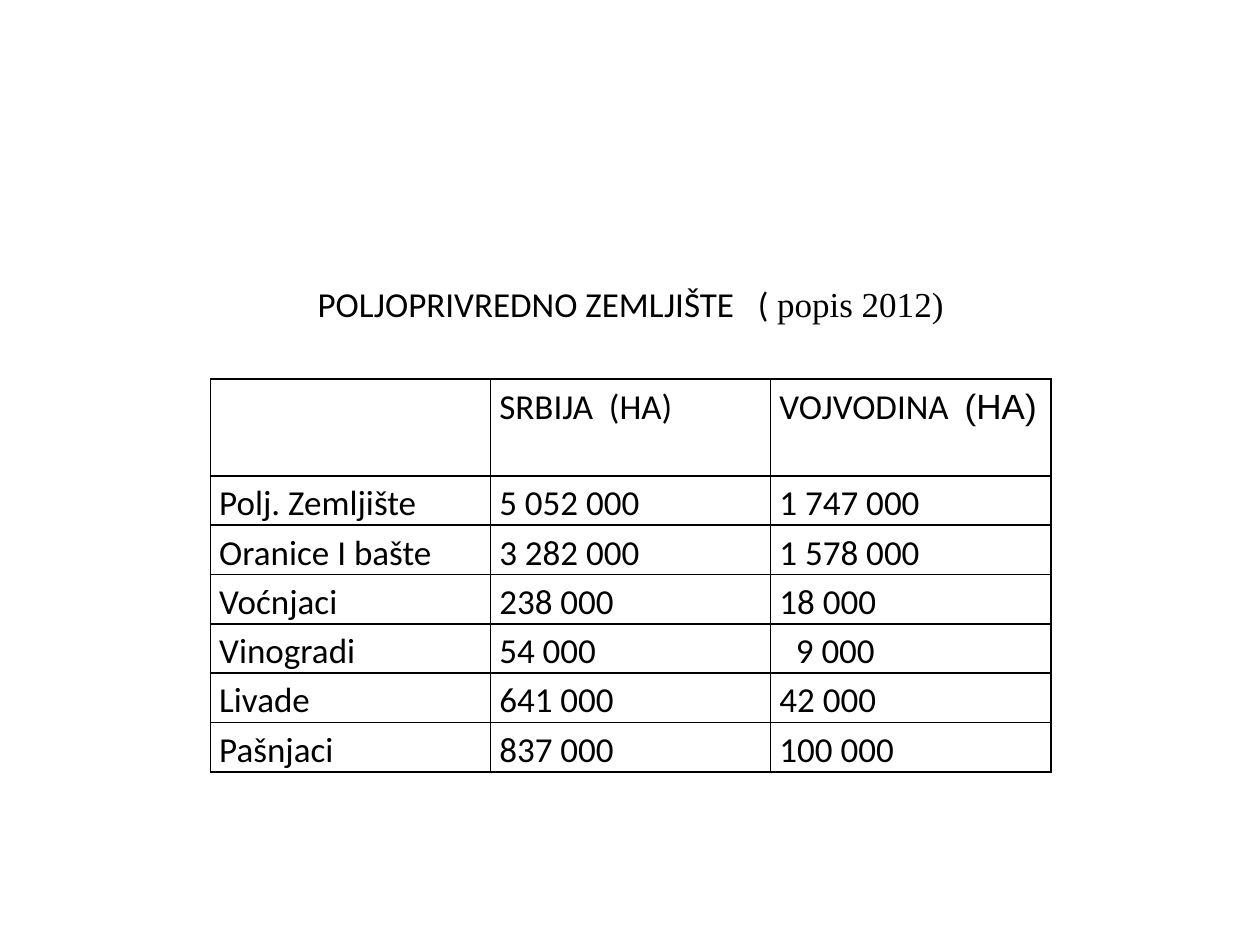
"""Build a slide with a table of farm land in Serbia and Vojvodina."""
from dataclasses import dataclass

import lxml.etree
import pptx
import pptx.dml.color
import pptx.enum.text
import pptx.oxml.ns
import pptx.util
from pptx.util import Inches

BLACK = pptx.dml.color.RGBColor(0, 0, 0)
SIZE = pptx.util.Pt(20)
EDGE = pptx.util.Pt(1)
PAD = 0.07


@dataclass
class Bit:
    text: str
    font: str = "Calibri"


@dataclass
class Entry:
    bits: list[Bit]
    indent: float = 0


def plain(text: str, indent: float = 0) -> Entry:
    return Entry([Bit(text)], indent)


TITLE = [Bit("POLJOPRIVREDNO ZEMLJIŠTE   ( "), Bit("popis 2012)", "Times New Roman")]
ROWS = [
    [Entry([]), plain("SRBIJA  (HA)"), Entry([Bit("VOJVODINA  "), Bit("(HA)", "Arial")])],
    [plain("Polj. Zemljište"), plain("5 052 000"), plain("1 747 000")],
    [plain("Oranice I bašte"), plain("3 282 000"), plain("1 578 000")],
    [plain("Voćnjaci"), plain("238 000"), plain("18 000")],
    [plain("Vinogradi"), plain("54 000"), plain("9 000", 0.13)],
    [plain("Livade"), plain("641 000"), plain("42 000")],
    [plain("Pašnjaci"), plain("837 000"), plain("100 000")],
]


def write(para, bits: list[Bit]) -> None:
    para.alignment = pptx.enum.text.PP_ALIGN.LEFT
    for bit in bits:
        run = para.add_run()
        run.text = bit.text
        run.font.name = bit.font
        run.font.size = SIZE
        run.font.color.rgb = BLACK


def border(cell) -> None:
    props = cell._tc.get_or_add_tcPr()
    name = pptx.oxml.ns.qn
    for side in ("a:lnL", "a:lnR", "a:lnT", "a:lnB"):
        line = lxml.etree.SubElement(props, name(side), w=str(int(EDGE)))
        fill = lxml.etree.SubElement(line, name("a:solidFill"))
        lxml.etree.SubElement(fill, name("a:srgbClr"), val=str(BLACK))


def fill_cell(cell, entry: Entry) -> None:
    cell.margin_left = Inches(PAD + entry.indent)
    cell.margin_right = Inches(PAD)
    cell.margin_top = cell.margin_bottom = 0
    border(cell)
    cell.fill.background()
    para = cell.text_frame.paragraphs[0]
    para.line_spacing = 1.15
    write(para, entry.bits)


def add_title(slide) -> None:
    title = slide.shapes.title
    title.left, title.top = Inches(2.42), Inches(2.19)
    title.width, title.height = Inches(7.89), Inches(0.77)
    frame = title.text_frame
    frame.word_wrap = True
    frame.auto_size = pptx.enum.text.MSO_AUTO_SIZE.NONE
    frame.vertical_anchor = pptx.enum.text.MSO_ANCHOR.TOP
    write(frame.paragraphs[0], TITLE)


def add_land(slide) -> None:
    count = len(ROWS)
    table = slide.shapes.add_table(
        count, 3, Inches(1.67), Inches(3.01), Inches(6.67), Inches(3.07)
    ).table
    table.first_row = table.horz_banding = False
    for row, entries in zip(table.rows, ROWS):
        row.height = Inches(3.07 / (count + 1))
        for cell, entry in zip(row.cells, entries):
            fill_cell(cell, entry)
    table.rows[0].height *= 2


def main() -> None:
    deck = pptx.Presentation()
    deck.slide_width, deck.slide_height = Inches(10), Inches(7.5)
    slide = deck.slides.add_slide(deck.slide_layouts[5])
    add_land(slide)
    add_title(slide)
    deck.save("out.pptx")


if __name__ == "__main__":
    main()
